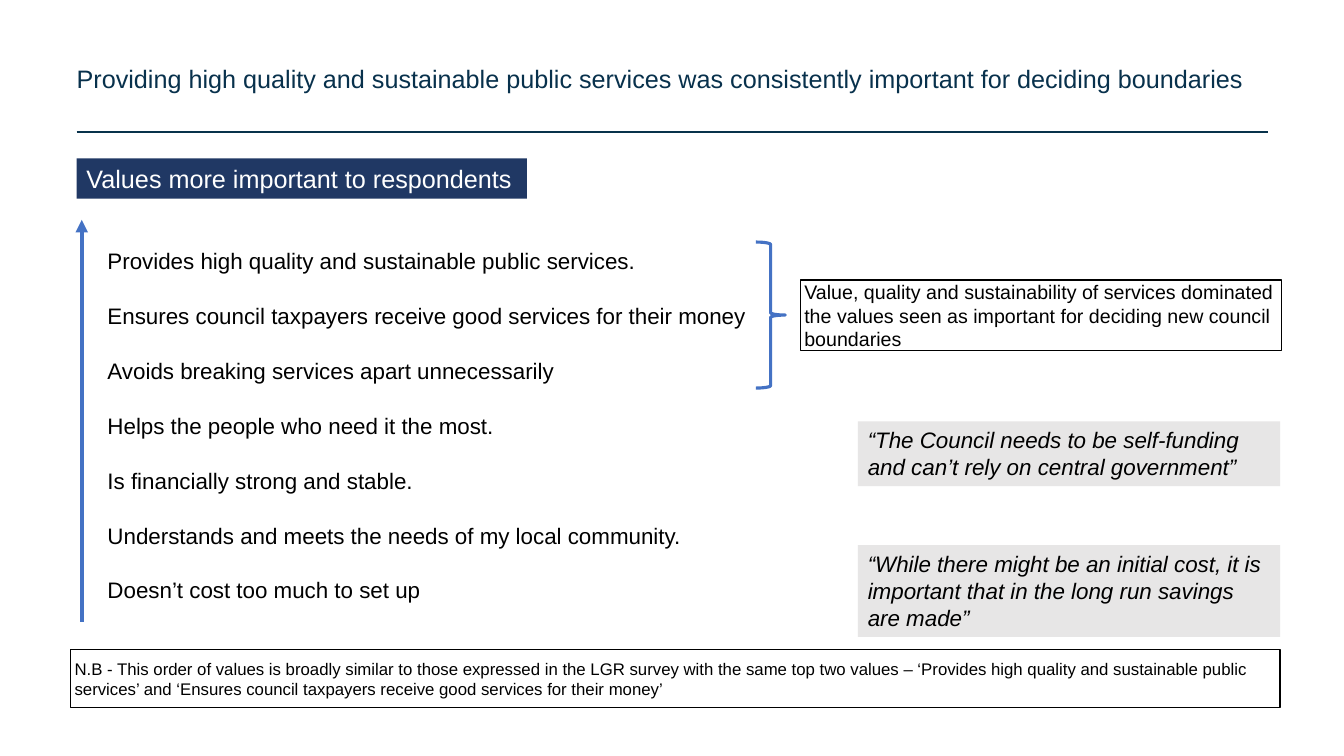
import pptx
import pptx.dml.color
import pptx.enum.shapes
import pptx.enum.text
import pptx.oxml.ns
import pptx.util
from lxml import etree

Cm, Pt = pptx.util.Cm, pptx.util.Pt
KIND = pptx.enum.shapes.MSO_SHAPE
LINK = pptx.enum.shapes.MSO_CONNECTOR
ANCHOR = pptx.enum.text.MSO_ANCHOR
LEFT = pptx.enum.text.PP_ALIGN.LEFT
COLOURS = {"title": "08314C", "rule": "08324B", "tag": "203864", "blue": "4472C4",
           "quote": "E7E6E6", "white": "FFFFFF", "black": "000000"}
SIDES = ("left", "top", "width", "height")
VALUES = [
    "Provides high quality and sustainable public services.",
    "Ensures council taxpayers receive good services for their money",
    "Avoids breaking services apart unnecessarily",
    "Helps the people who need it the most.",
    "Is financially strong and stable.",
    "Understands and meets the needs of my local community.",
    "Doesn’t cost too much to set up",
]
CLAIM = ("Value, quality and sustainability of services dominated the values "
         "seen as important for deciding new council boundaries")
QUOTES = [
    ("“The Council needs to be self-funding and can’t rely on central government”", 10.62, 1.63),
    ("“While there might be an initial cost, it is important that in the long run "
     "savings are made”", 13.74, 2.31),
]
NOTE = ("N.B - This order of values is broadly similar to those expressed in the LGR survey "
        "with the same top two values – ‘Provides high quality and sustainable public "
        "services’ and ‘Ensures council taxpayers receive good services for their money’")


def rgb(name):
    return pptx.dml.color.RGBColor.from_string(COLOURS[name])


def write(shape, lines, size, colour="black", italic=False, gap=0,
          anchor=ANCHOR.TOP, inset=(0.25, 0.13)):
    frame = shape.text_frame
    side, top = (Cm(n) for n in inset)
    look = {"word_wrap": True, "auto_size": pptx.enum.text.MSO_AUTO_SIZE.NONE,
            "vertical_anchor": anchor, "margin_left": side, "margin_right": side,
            "margin_top": top, "margin_bottom": top}
    for key, value in look.items():
        setattr(frame, key, value)
    frame.text = "\n".join(lines)
    for i, par in enumerate(frame.paragraphs):
        par.alignment = LEFT
        par.space_before = Pt(gap if i else 0)
        for key, value in {"name": "Arial", "size": Pt(size), "italic": italic}.items():
            setattr(par.font, key, value)
        par.font.color.rgb = rgb(colour)


def draw(slide, box, fill=None, line=None, weight=1, kind=KIND.RECTANGLE):
    shape = slide.shapes.add_shape(kind, *(Cm(n) for n in box))
    shape.shadow.inherit = False
    if fill:
        shape.fill.solid()
        shape.fill.fore_color.rgb = rgb(fill)
    else:
        shape.fill.background()
    if line:
        shape.line.color.rgb = rgb(line)
        shape.line.width = Pt(weight)
    else:
        shape.line.fill.background()
    return shape


def link(slide, ends, colour, weight, arrow=False):
    line = slide.shapes.add_connector(LINK.STRAIGHT, *(Cm(n) for n in ends))
    line.line.color.rgb = rgb(colour)
    line.line.width = Pt(weight)
    if arrow:
        tail = etree.SubElement(line.line._get_or_add_ln(), pptx.oxml.ns.qn("a:tailEnd"))
        tail.set("type", "triangle")
    etree.SubElement(line._element.spPr, pptx.oxml.ns.qn("a:effectLst"))


def head(slide, box):
    x, y, w, h = box
    title = slide.shapes.title
    for side, value in zip(SIDES, box):
        setattr(title, side, Cm(value))
    write(title, ["Providing high quality and sustainable public services was "
                  "consistently important for deciding boundaries"],
          18, "title", anchor=ANCHOR.MIDDLE, inset=(0, 0))
    link(slide, (x, y + 1.73, x + 30.02, y + 1.73), "rule", 1.25)


def ranks(slide, box):
    """Tag, upward arrow, ordered values and the brace around the top three."""
    x, y, w, h = box
    tag = draw(slide, (x, y, 11.35, 1.02), "tag")
    write(tag, ["Values more important to respondents"], 18, "white")
    link(slide, (x + 0.13, y + h, x + 0.13, y + 1.55), "blue", 3, arrow=True)
    top = y + 2.11
    area = [Cm(n) for n in (x + 0.53, top, w - 0.53, 9.4)]
    write(slide.shapes.add_textbox(*area), VALUES, 16, gap=20)
    draw(slide, (x + 17.12, top, 0.74, 3.68), line="blue", weight=2.25,
         kind=KIND.RIGHT_BRACE)


def framed(slide, box, text, size):
    shape = draw(slide, box, "white", "black")
    write(shape, [text], size, anchor=ANCHOR.MIDDLE, inset=(0.1, 0.1))


def quotes(slide, x, w):
    for text, y, h in QUOTES:
        write(draw(slide, (x, y, w, h), "quote"), [text], 16, italic=True)


def main():
    deck = pptx.Presentation()
    deck.slide_width, deck.slide_height = Cm(33.87), Cm(19.05)
    slide = deck.slides.add_slide(deck.slide_layouts[5])
    head(slide, (1.93, 1.6, 30.2, 0.76))
    ranks(slide, (1.93, 3.99, 18.21, 11.68))
    framed(slide, (20.17, 7.06, 12.12, 1.78), CLAIM, 14)
    quotes(slide, 21.62, 10.64)
    framed(slide, (1.78, 16.36, 30.48, 1.47), NOTE, 12)
    deck.save("out.pptx")


if __name__ == "__main__":
    main()
